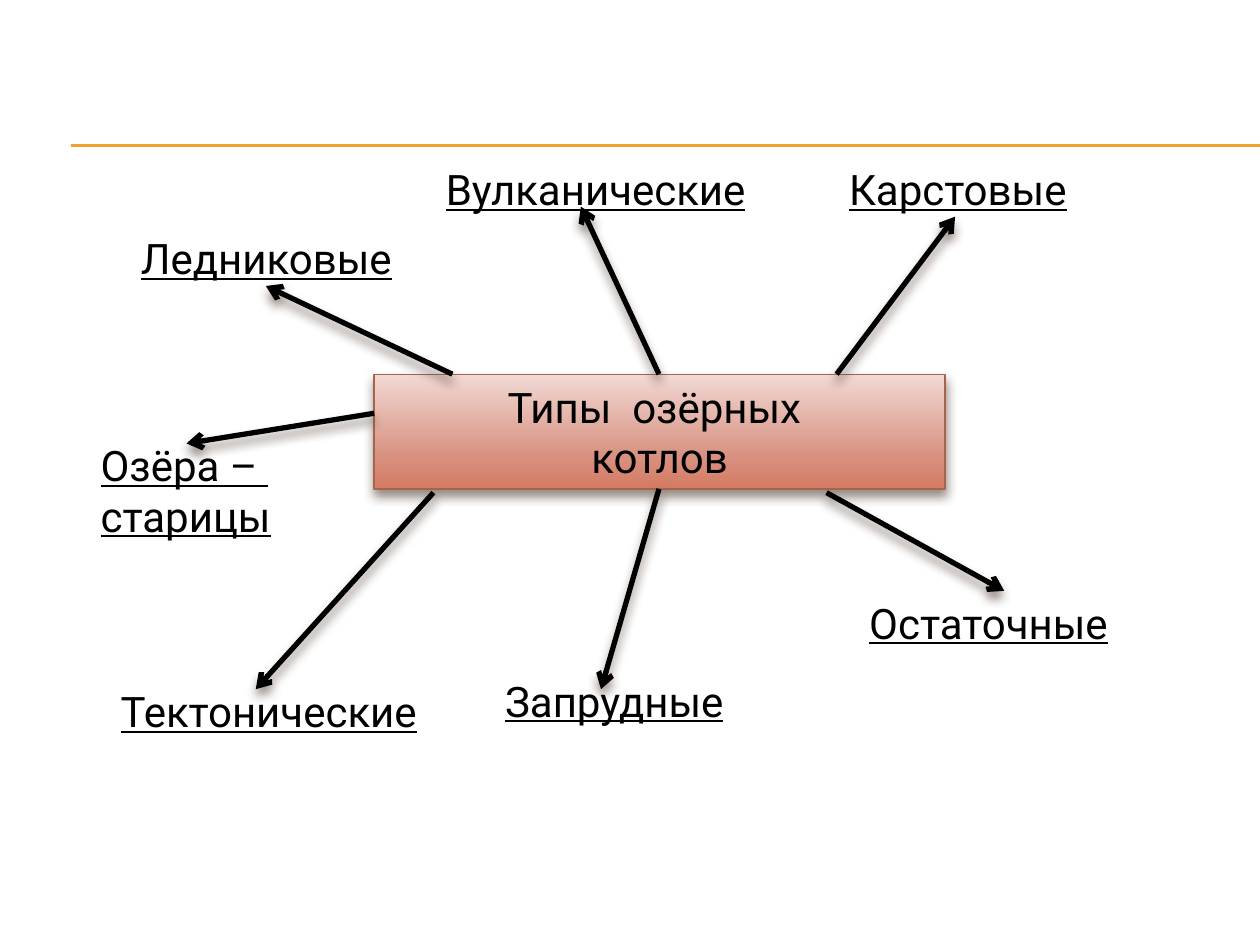
from copy import deepcopy

from lxml import etree
from pptx import Presentation
from pptx.dml.color import RGBColor
from pptx.enum import shapes, text
from pptx.oxml import parse_xml
from pptx.oxml.ns import nsdecls, qn
from pptx.util import Inches, Pt

COLORS = {"rule": "F0A22E", "edge": "A5644E", "ink": "000000", "shadow": "4E3B30"}
GRADIENT = [(0, "F1D9D4"), (0.72, "D89180"), (1, "D47A62")]
FONT = {"name": "Roboto", "size": Pt(24)}

# Content: centre box, then each lake type with its label box and arrow
CENTRE = (["Типы  озёрных ", "котлов"], (2.97, 2.97, 4.53, 0.91))
LAKE_TYPES = [
    (["Тектонические"], (0.86, 5.39, 3.75, 0.5), (3.44, 3.91, 2.03, 5.47)),
    (["Ледниковые"], (1.02, 1.8, 2.42, 0.5), (3.59, 2.97, 2.11, 2.27)),
    (["Запрудные"], (3.91, 5.31, 2.19, 0.5), (5.23, 3.88, 4.77, 5.47)),
    (["Остаточные"], (6.8, 4.69, 2.89, 0.5), (6.56, 3.91, 7.97, 4.69)),
    (["Вулканические"], (3.44, 1.25, 2.66, 0.5), (5.23, 2.97, 4.61, 1.64)),
    (["Карстовые"], (6.64, 1.25, 2.97, 0.5), (6.64, 2.97, 7.58, 1.72)),
    (["Озёра – ", "старицы"], (0.7, 3.44, 2.11, 0.91), (2.97, 3.28, 1.48, 3.52)),
]
RULES = [(0.56, y, 10, y) for y in (1.15, 1.16)]


def rgb(key):
    return RGBColor.from_string(COLORS[key])


def inches(values):
    return [Inches(v) for v in values]


def add_shadow(shape):
    shape._element.spPr.append(parse_xml(
        f'<a:effectLst {nsdecls("a")}>'
        f'<a:outerShdw blurRad="{Pt(6)}" dist="{Pt(4)}" dir="5400000" rotWithShape="0">'
        f'<a:srgbClr val="{COLORS["shadow"]}"><a:alpha val="60000"/></a:srgbClr>'
        '</a:outerShdw></a:effectLst>'))


def add_line(slide, ends, color, width):
    line = slide.shapes.add_connector(shapes.MSO_CONNECTOR.STRAIGHT, *inches(ends))
    line.line.color.rgb = rgb(color)
    line.line.width = Pt(width)
    return line


def write(shape, lines, align, underline):
    frame = shape.text_frame
    frame.word_wrap = True
    frame.text = "\n".join(lines)
    for paragraph in frame.paragraphs:
        paragraph.alignment = align
        font = paragraph.runs[0].font
        for attribute, value in {**FONT, "underline": underline}.items():
            setattr(font, attribute, value)
        font.color.rgb = rgb("ink")


prs = Presentation()
prs.slide_width, prs.slide_height = inches((10, 7.5))
slide = prs.slides.add_slide(prs.slide_layouts[6])

# Rules under the heading area
for ends in RULES:
    rule = add_line(slide, ends, "rule", 0.75)
    etree.SubElement(rule._element.spPr, qn("a:effectLst"))

# Centre box with a three-stop gradient
lines, place = CENTRE
centre = slide.shapes.add_shape(shapes.MSO_SHAPE.RECTANGLE, *inches(place))
centre.fill.gradient()
centre.fill.gradient_angle = 270
stop_list = centre._element.spPr.find(".//" + qn("a:gsLst"))
stop_list.append(deepcopy(stop_list[0]))
for stop, (position, color) in zip(centre.fill.gradient_stops, GRADIENT):
    stop.position = position
    stop.color.rgb = RGBColor.from_string(color)
centre.line.color.rgb = rgb("edge")
centre.line.width = Pt(0.79)
add_shadow(centre)
write(centre, lines, text.PP_ALIGN.CENTER, False)

# Arrows and their labels
for lines, place, ends in LAKE_TYPES:
    arrow = add_line(slide, ends, "ink", 3)
    etree.SubElement(arrow.line._get_or_add_ln(), qn("a:tailEnd"), type="arrow")
    add_shadow(arrow)
    label = slide.shapes.add_textbox(*inches(place))
    write(label, lines, text.PP_ALIGN.LEFT, True)

prs.save("out.pptx")
